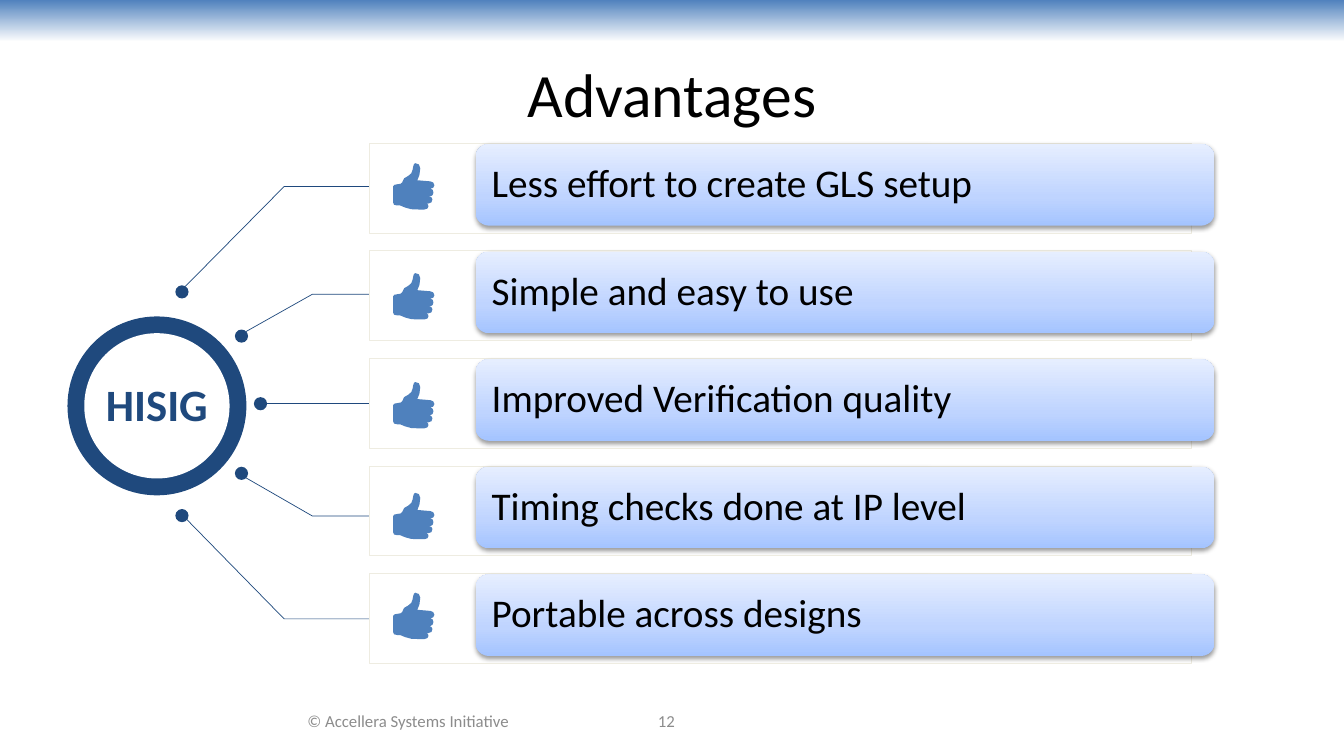
from lxml import etree
from pptx import Presentation
from pptx import util as u
from pptx.dml.color import RGBColor
from pptx.enum import shapes, text
from pptx.oxml import ns

COLORS = {
    "navy": "1F497D", "blue": "4F81BD", "white": "FFFFFF", "black": "000000",
    "grey": "8C8C8C", "frame": "EEECE1",
    "bar_low": "A4C4FF", "bar_mid": "BFD4FF", "bar_high": "E6EEFF",
}
ADVANTAGES = [
    "Less effort to create GLS setup",
    "Simple and easy to use",
    "Improved Verification quality",
    "Timing checks done at IP level",
    "Portable across designs",
]
THUMB_TOPS = [116.6, 195.1, 272.9, 352.1, 423.4]
DOTS = [(125.3, 203.8), (167.8, 235.4), (181.4, 283.7), (167.8, 333.4), (125.3, 363.6)]
BRANCHES = [
    [(264.2, 133.2), (203, 133.2), (132.5, 204.5)],
    [(264.2, 210.2), (223.2, 210.2), (175.7, 236.9)],
    [(264.2, 368.6), (223.2, 368.6), (175.7, 341.3)],
    [(264.2, 442.1), (203, 442.1), (132.5, 370.1)],
]
THUMB = [
    (2.9, 30.2), (5, 30.2), (8.6, 31.7), (13, 32.9), (18.7, 33.1), (22.3, 33.1),
    (24.5, 32.4), (25.2, 31), (25, 29.6), (23.8, 28.8), (25.2, 28.8),
    (27.4, 28), (28.1, 25.9), (27.4, 24.4), (25.2, 23.8), (26.6, 23.8),
    (28.2, 22.8), (28.8, 20.9), (28.2, 19), (26.6, 18.2), (28.6, 17.6),
    (29.5, 15.8), (28.6, 13.8), (26.6, 13), (17.3, 12.2), (18.8, 8.4),
    (19.4, 3.6), (18.4, 0.9), (15.8, 0), (14.9, 0.7), (14.4, 2.2),
    (13.9, 4.8), (13, 7.2), (10.8, 9.1), (7.9, 10.8), (6.5, 13.7),
    (5.4, 14.7), (2.9, 15.1), (0.9, 15.5), (0, 16.6), (0, 28.1), (0.7, 29.7),
]


def rgb(name):
    return RGBColor.from_string(COLORS[name])


def paint(shape, fill=None, line=None, weight=0.75):
    shape.shadow.inherit = False
    for target, name in ((shape.fill, fill), (shape.line.fill, line)):
        if name:
            target.solid()
            target.fore_color.rgb = rgb(name)
        else:
            target.background()
    if line:
        shape.line.width = u.Pt(weight)
    return shape


def add_block(page, kind, box, **look):
    return paint(page.shapes.add_shape(kind, *map(u.Pt, box)), **look)


def add_outline(page, points, origin=(0, 0), close=False, **look):
    scaled = [(x * 100, y * 100) for x, y in points]
    builder = page.shapes.build_freeform(*scaled[0], scale=u.Pt(0.01))
    builder.add_line_segments(scaled[1:], close=close)
    return paint(builder.convert_to_shape(*map(u.Pt, origin)), **look)


def shade(shape, stops, angle):
    old = shape.element.spPr.find(ns.qn("a:noFill"))
    gradient = etree.Element(ns.qn("a:gradFill"), rotWithShape="1")
    stop_list = etree.SubElement(gradient, ns.qn("a:gsLst"))
    for position, name in stops:
        stop = etree.SubElement(stop_list, ns.qn("a:gs"), pos=str(position * 1000))
        etree.SubElement(stop, ns.qn("a:srgbClr"), val=COLORS[name])
    etree.SubElement(gradient, ns.qn("a:lin"), ang=str(angle * 60000), scaled="0")
    old.getparent().replace(old, gradient)


def drop_shadow(shape):
    effects = shape.element.spPr.find(ns.qn("a:effectLst"))
    shadow = etree.SubElement(
        effects, ns.qn("a:outerShdw"), blurRad=str(u.Pt(3.1)), dist=str(u.Pt(1.6)),
        dir="5400000", rotWithShape="0")
    color = etree.SubElement(shadow, ns.qn("a:srgbClr"), val=COLORS["black"])
    etree.SubElement(color, ns.qn("a:alpha"), val="38000")


def write(shape, words, color, font, align="CENTER", frame=None, spacing=None):
    body = shape.text_frame
    frame_format = {"word_wrap": True, "vertical_anchor": text.MSO_ANCHOR.MIDDLE}
    for key, value in {**frame_format, **(frame or {})}.items():
        setattr(body, key, value)
    para = body.paragraphs[0]
    para.alignment = text.PP_ALIGN[align]
    para.line_spacing = spacing
    span = para.add_run()
    span.text = words
    for key, value in {"name": "Calibri", **font}.items():
        setattr(span.font, key, value)
    span.font.color.rgb = rgb(color)


def add_label(page, box, *args, **kwargs):
    write(page.shapes.add_textbox(*map(u.Pt, box)), *args, **kwargs)


def build_header(page, box):
    left, top, width, height = box
    band = add_block(page, shapes.MSO_SHAPE.RECTANGLE, (left, top, width, 30))
    shade(band, [(0, "blue"), (100, "white")], 90)
    add_label(page, (left + 48, top + 21.6, width - 96, height - 21.6),
              "Advantages", "black", {"size": u.Pt(44)})


def build_hub(page, box):
    left, top, size = box
    ring = 12
    inner = size - 2 * ring
    add_block(page, shapes.MSO_SHAPE.OVAL, (left, top, size, size), fill="navy")
    add_block(page, shapes.MSO_SHAPE.OVAL, (left + ring, top + ring, inner, inner), fill="white")
    add_label(page, (left + ring, top + 39.6, inner, 46), "HISIG", "navy",
              {"size": u.Pt(32), "bold": True})


def build_branches(page, box):
    left, top = box
    for x, y in DOTS:
        add_block(page, shapes.MSO_SHAPE.OVAL, (left + x, top + y, 9.4, 9.4), fill="navy")
    for points in BRANCHES:
        add_outline(page, [(left + x, top + y) for x, y in points], line="navy", weight=0.5)
    ends = (left + 190.8, top + 288.4, left + 264.2, top + 288.4)
    middle = page.shapes.add_connector(shapes.MSO_CONNECTOR.STRAIGHT, *map(u.Pt, ends))
    middle.line.width = u.Pt(0.5)
    middle.line.color.rgb = rgb("navy")
    etree.SubElement(middle.element.spPr, ns.qn("a:effectLst"))


def build_advantage(page, box, words, thumb_top):
    left, top, width, height = box
    add_block(page, shapes.MSO_SHAPE.RECTANGLE, box, line="frame")
    bar = add_block(page, shapes.MSO_SHAPE.ROUNDED_RECTANGLE,
                    (left + 75.5, top + 0.5, width - 59, height - 5.8))
    shade(bar, [(0, "bar_low"), (35, "bar_mid"), (100, "bar_high")], 270)
    drop_shadow(bar)
    write(bar, words, "black", {"size": u.Pt(28)}, align="LEFT", spacing=0.9,
          frame={"margin_left": u.Pt(8.7), "margin_right": u.Pt(8.7)})
    add_outline(page, THUMB, (left + 16.6, thumb_top), close=True, fill="blue")


def build_footer(page, box):
    left, top, height = box
    for offset, width, words in ((0, 231.8, "© Accellera Systems Initiative"),
                                 (208.1, 184.3, "12")):
        add_label(page, (left + offset, top, width, height), words, "grey", {"size": u.Pt(12)})


def main():
    deck = Presentation()
    deck.slide_width, deck.slide_height = u.Pt(960), u.Pt(540)
    page = deck.slides.add_slide(deck.slide_layouts[6])
    build_header(page, (0, 0, 960, 111.6))
    build_hub(page, (48.2, 226, 127.8))
    build_branches(page, (0, 0))
    for index, (words, thumb_top) in enumerate(zip(ADVANTAGES, THUMB_TOPS)):
        build_advantage(page, (264.2, 102.4 + index * 76.85, 586.8, 64.1), words, thumb_top)
    build_footer(page, (175.7, 500.4, 28.8))
    deck.save("out.pptx")


if __name__ == "__main__":
    main()
